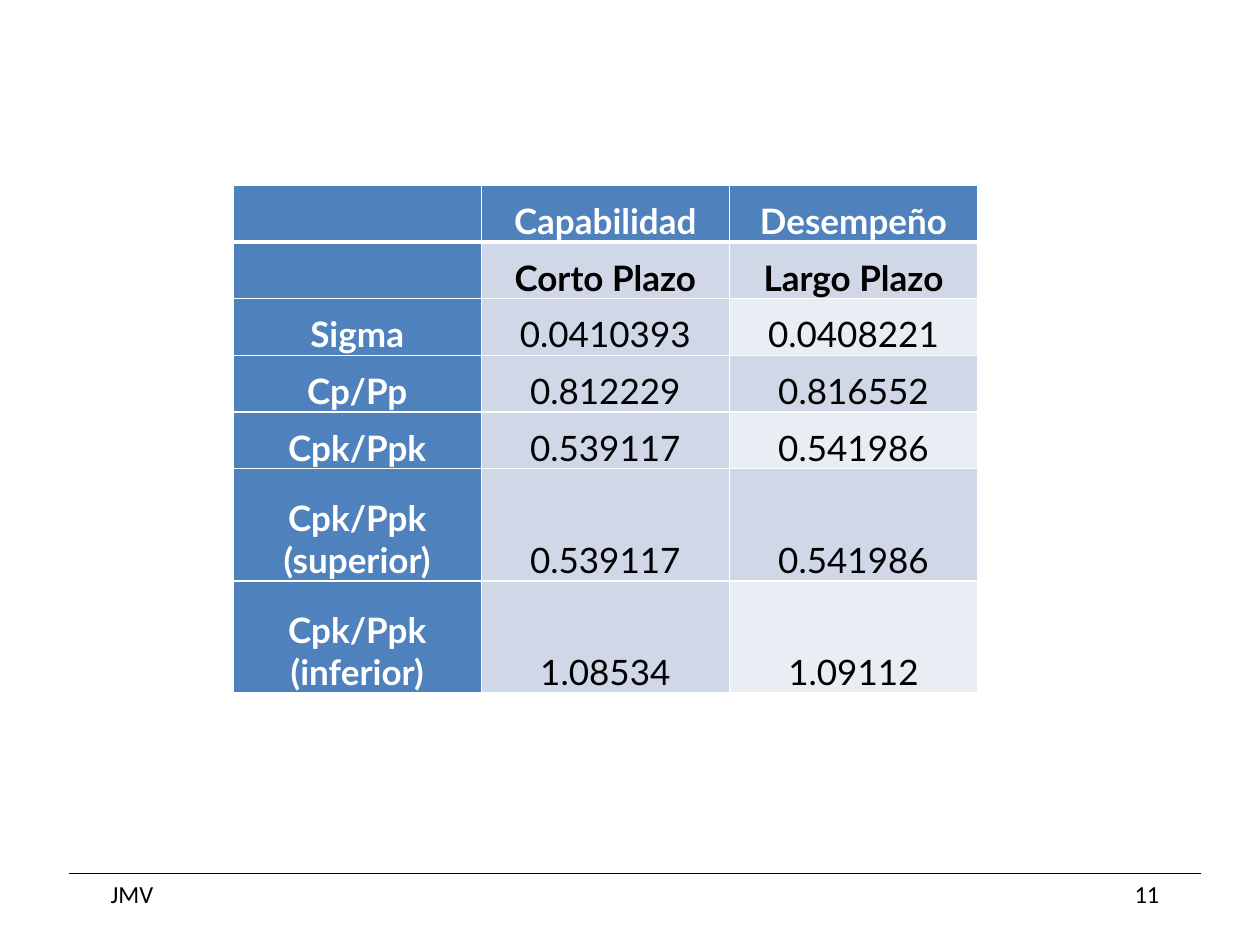
import pptx
import pptx.dml.color
import pptx.enum.shapes
import pptx.enum.text
import pptx.oxml.ns
import pptx.util
from lxml import etree

SLIDE_W, SLIDE_H = 10, 7.5
BLUE, BAND, LIGHT_BAND = "4F81BD", "D0D8E8", "E9EDF4"
WHITE, BLACK = "FFFFFF", "000000"
ALIGN = pptx.enum.text.PP_ALIGN
ANCHOR = pptx.enum.text.MSO_ANCHOR

CAPABILITY = [
    ("", "Capabilidad", "Desempeño"),
    ("", "Corto Plazo", "Largo Plazo"),
    ("Sigma", "0.0410393", "0.0408221"),
    ("Cp/Pp", "0.812229", "0.816552"),
    ("Cpk/Ppk", "0.539117", "0.541986"),
    ("Cpk/Ppk (superior)", "0.539117", "0.541986"),
    ("Cpk/Ppk (inferior)", "1.08534", "1.09112"),
]
COLUMN_W = 1.97
ROW_H = 0.45
TALL_ROW_H = 0.89
FOOTER_TOP = 6.93


def inches(value):
    return pptx.util.Inches(value)


def color(hex_code):
    return pptx.dml.color.RGBColor.from_string(hex_code)


def write(frame, text, font="Lato", size=20, ink=BLACK, bold=False, align=ALIGN.LEFT):
    paragraph = frame.paragraphs[0]
    paragraph.alignment = align
    run = paragraph.add_run()
    run.text = text
    run.font.name = font
    run.font.size = pptx.util.Pt(size)
    run.font.bold = bold
    run.font.color.rgb = color(ink)


def add_border(cell, side, width):
    properties = cell._tc.get_or_add_tcPr()
    edge = etree.SubElement(properties, pptx.oxml.ns.qn(f"a:ln{side}"),
                            w=str(pptx.util.Pt(width)))
    fill = etree.SubElement(edge, pptx.oxml.ns.qn("a:solidFill"))
    etree.SubElement(fill, pptx.oxml.ns.qn("a:srgbClr"), val=WHITE)


def cell_fill(row, column):
    if row == 0 or column == 0:
        return BLUE
    # Only the last column alternates between the two bands
    return LIGHT_BAND if column == 2 and row % 2 == 0 else BAND


def style_cell(cell, row, column):
    # The rule under the header is thicker than the rest
    widths = {"L": 1, "R": 1, "T": 3 if row == 1 else 1, "B": 3 if row == 0 else 1}
    for side, width in widths.items():
        add_border(cell, side, width)
    cell.fill.solid()
    cell.fill.fore_color.rgb = color(cell_fill(row, column))


def add_capability_table(slide):
    heights = [TALL_ROW_H if "(" in row[0] else ROW_H for row in CAPABILITY]
    columns = len(CAPABILITY[0])
    table = slide.shapes.add_table(
        len(CAPABILITY), columns, inches(1.85), inches(1.47),
        inches(COLUMN_W * columns), inches(sum(heights))).table
    for column in table.columns:
        column.width = inches(COLUMN_W)
    for r, (labels, height) in enumerate(zip(CAPABILITY, heights)):
        table.rows[r].height = inches(height)
        for c, label in enumerate(labels):
            cell = table.cell(r, c)
            style_cell(cell, r, c)
            if not label:
                continue
            cell.vertical_anchor = ANCHOR.BOTTOM
            cell.margin_left = cell.margin_right = cell.margin_top = inches(0.01)
            cell.margin_bottom = 0
            write(cell.text_frame, label, align=ALIGN.CENTER, bold=r < 2 or c == 0,
                  ink=WHITE if r == 0 or c == 0 else BLACK)


def add_footer_text(slide, text, left, align):
    box = slide.shapes.add_textbox(inches(left), inches(FOOTER_TOP),
                                   inches(2.19), inches(0.34))
    box.text_frame.word_wrap = True
    write(box.text_frame, text, font="Calibri", size=14, align=align)


def add_footer_rule(slide):
    rule = slide.shapes.add_connector(
        pptx.enum.shapes.MSO_CONNECTOR.STRAIGHT, inches(0.55), inches(FOOTER_TOP),
        inches(9.53), inches(FOOTER_TOP))
    rule.line.color.rgb = color(BLACK)
    rule.line.width = pptx.util.Pt(0.75)
    etree.SubElement(rule._element.spPr, pptx.oxml.ns.qn("a:effectLst"))


def main():
    deck = pptx.Presentation()
    deck.slide_width, deck.slide_height = inches(SLIDE_W), inches(SLIDE_H)
    slide = deck.slides.add_slide(deck.slide_layouts[6])

    # Footer: author, page number and the rule above them
    add_footer_text(slide, "JMV", 0.78, ALIGN.LEFT)
    add_footer_text(slide, "11", 7.11, ALIGN.RIGHT)
    add_footer_rule(slide)

    # Short-term capability against long-term performance
    add_capability_table(slide)

    deck.save("out.pptx")


if __name__ == "__main__":
    main()
